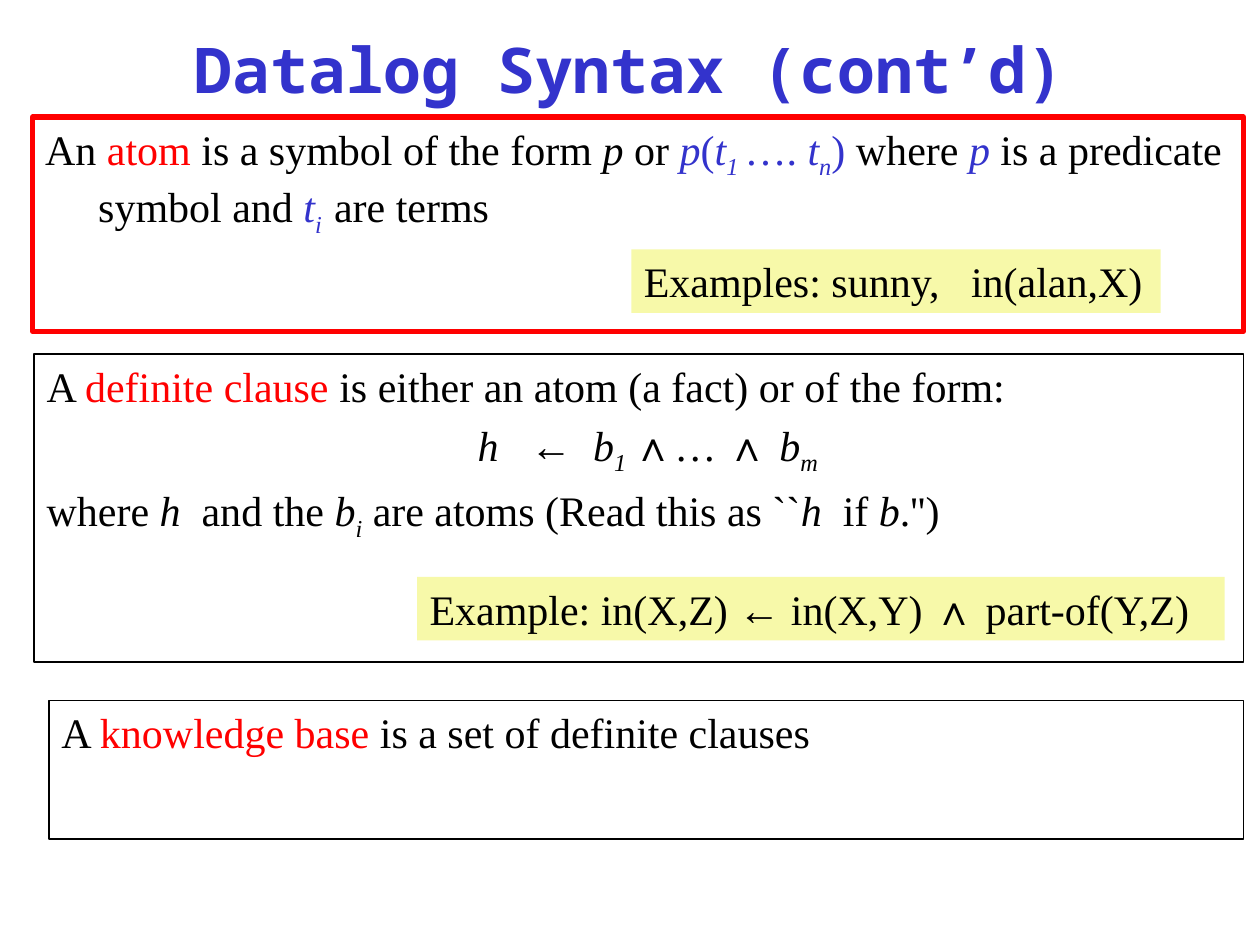
"""Build the Datalog syntax slide with its three definitions and two examples."""
from pptx import Presentation
from pptx.dml.color import RGBColor
from pptx.enum.shapes import MSO_SHAPE as Shape
from pptx.enum.text import MSO_ANCHOR as Anchor, MSO_AUTO_SIZE as AutoSize, PP_ALIGN as Align
from pptx.util import Cm, Pt

BLACK, RED, BLUE, WHITE, YELLOW = "000000", "FF0000", "3333CC", "FFFFFF", "F7F9A9"
HANGING = {"marL": Cm(1.07), "indent": Cm(-1.07)}
FORMULA = {"marL": Cm(8.69), "indent": 0}
PLAIN = {"marL": 0, "indent": 0}


def color(value):
    """Turn a hex string into a colour."""
    return RGBColor.from_string(value)


def add_span(para, text, tint=BLACK, style="", size=24, font="Times New Roman"):
    """Add a run; style letters are b bold, i italic and s subscript."""
    span = para.add_run()
    span.text = text
    formats = {"size": Pt(size), "name": font, "bold": "b" in style, "italic": "i" in style}
    for name, value in formats.items():
        setattr(span.font, name, value)
    span.font.color.rgb = color(tint)
    if "s" in style:
        span.font._element.set("baseline", "-25000")


deck = Presentation()
deck.slide_width, deck.slide_height = Cm(25.4), Cm(19.05)
page = deck.slides.add_slide(deck.slide_layouts[5])

title = page.shapes.title
place = {"left": Cm(0.84), "top": Cm(0.43), "width": Cm(23.7), "height": Cm(1.9)}
for name, value in place.items():
    setattr(title, name, value)
title.text_frame.auto_size = AutoSize.NONE
title.text_frame.vertical_anchor = Anchor.MIDDLE
heading = title.text_frame.paragraphs[0]
heading.alignment = Align.CENTER
add_span(heading, "Datalog Syntax (cont’d)", BLUE, "b", 36, "Noto Sans Mono")

atom = [(HANGING, [
    ("An ",), ("atom ", RED), ("is a symbol of the form ",), ("p", BLACK, "i"), (" or ",),
    ("p", BLUE, "i"), ("(", BLUE), ("t", BLUE, "i"), ("1 ", BLUE, "is"), ("…. ", BLUE),
    ("t", BLUE, "i"), ("n", BLUE, "is"), (") ", BLUE), ("where ",), ("p", BLUE, "i"),
    (" is a predicate symbol and ",), ("t", BLUE, "i"), ("i  ", BLUE, "is"), ("are terms",)])]
clause = [
    (HANGING, [("A ",), ("definite clause ", RED),
               ("is either an atom (a fact) or of the form:",)]),
    (FORMULA, [("h   ", BLACK, "i"), ("←  ",), ("b", BLACK, "i"), ("1 ", BLACK, "is"),
               ("∧… ∧ ",), ("b", BLACK, "i"), ("m", BLACK, "is")]),
    (HANGING, [("where ",), ("h", BLACK, "i"), ("  and the ",), ("b", BLACK, "i"),
               ("i", BLACK, "is"), (" are atoms (Read this as ``",), ("h", BLACK, "i"),
               ("  if ",), ("b", BLACK, "i"), (".'')",)])]
knowledge = [(HANGING, [("A ",), ("knowledge base ", RED), ("is a set of definite clauses",)])]
atom_example = [(PLAIN, [("Examples: sunny,   in(alan,X)",)])]
clause_example = [(PLAIN, [("Example: in(X,Z) ← in(X,Y) ∧ part-of(Y,Z)",)])]

boxes = [
    ((0.66, 2.36, 24.41, 4.32), WHITE, RED, 3, atom),
    ((0.69, 7.14, 24.38, 6.2), WHITE, BLACK, 1, clause),
    ((0.99, 14.12, 24.08, 2.79), WHITE, BLACK, 1, knowledge),
    ((12.73, 5.03, 10.67, 1.28), YELLOW, None, 0, atom_example),
    ((8.41, 11.63, 16.28, 1.28), YELLOW, None, 0, clause_example),
]
for bounds, fill, outline, weight, paragraphs in boxes:
    box = page.shapes.add_shape(Shape.RECTANGLE, *map(Cm, bounds))
    box.shadow.inherit = False
    box.fill.solid()
    box.fill.fore_color.rgb = color(fill)
    if outline:
        box.line.color.rgb = color(outline)
        box.line.width = Pt(weight)
    else:
        box.line.fill.background()
    frame = box.text_frame
    frame.word_wrap = True
    frame.vertical_anchor = Anchor.TOP
    for index, (indents, spans) in enumerate(paragraphs):
        para = frame.add_paragraph() if index else frame.paragraphs[0]
        para.alignment = Align.LEFT
        para.space_before = Pt(0 if indents is PLAIN else 4.8)
        for name, value in indents.items():
            para._p.get_or_add_pPr().set(name, str(int(value)))
        for span in spans:
            add_span(para, *span)

deck.save("out.pptx")
